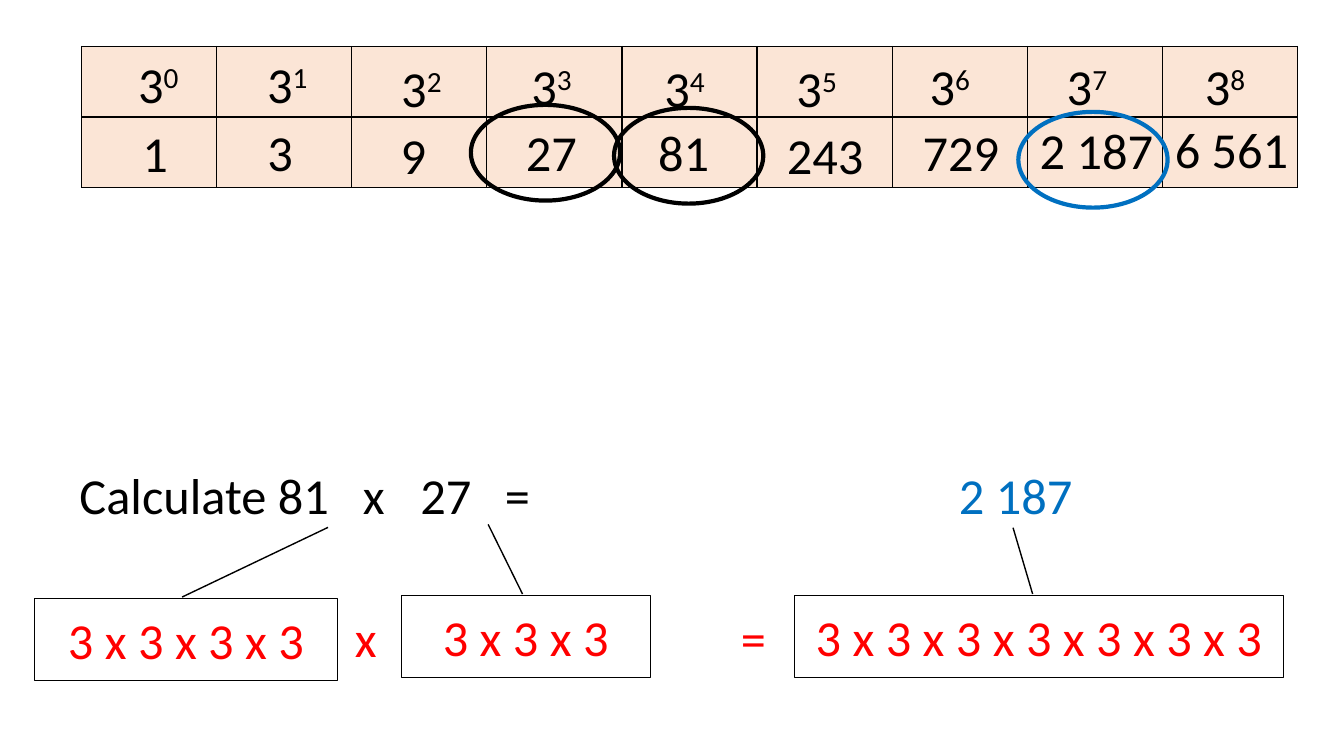
from lxml import etree
from pptx import Presentation
from pptx.dml.color import RGBColor
from pptx.enum.shapes import MSO_SHAPE
from pptx.enum.text import MSO_ANCHOR, MSO_AUTO_SIZE, PP_ALIGN
from pptx.oxml.ns import qn
from pptx.util import Inches, Pt

BLACK, RED, BLUE = "000000", "FF0000", "0070C0"
WHITE, PEACH = "FFFFFF", "FBE5D6"
COLUMN_WIDTH, ROW_HEIGHT = 1.34, 0.7
TEXT_HEIGHT = 0.71

# Value, offset of the power (left, top), box of the value (left, top, width),
# all measured from the corner of the table.
POWERS = [
    ("1", (0.39, 0.02), (0.36, 0.7, 0.74)),
    ("3", (1.67, 0.02), (1.6, 0.69, 0.74)),
    ("9", (3.0, 0.06), (2.92, 0.72, 0.74)),
    ("27", (4.29, 0.04), (4.29, 0.69, 0.74)),
    ("81", (5.61, 0.06), (5.6, 0.69, 0.74)),
    ("243", (6.92, 0.06), (6.86, 0.72, 1.03)),
    ("729", (8.24, 0.04), (8.23, 0.69, 0.98)),
    ("2 187", (9.6, 0.04), (9.38, 0.67, 1.37)),
    ("6 561", (10.97, 0.04), (10.68, 0.66, 1.45)),
]
# Offset of each ring from the corner of the table, and its colour.
RINGS = [(3.86, 0.58, BLACK), (5.28, 0.61, BLACK), (9.29, 0.65, BLUE)]


def rgb(hex_colour):
    return RGBColor.from_string(hex_colour)


def format_runs(paragraph, colour):
    for run in paragraph.runs:
        run.font.name = "Calibri"
        run.font.size = Pt(36)
        run.font.color.rgb = rgb(colour)


def add_text(slide, text, left, top, width, colour=BLACK, align=PP_ALIGN.CENTER):
    box = slide.shapes.add_textbox(
        Inches(left), Inches(top), Inches(width), Inches(TEXT_HEIGHT))
    frame = box.text_frame
    frame.word_wrap = True
    frame.auto_size = MSO_AUTO_SIZE.SHAPE_TO_FIT_TEXT
    paragraph = frame.paragraphs[0]
    paragraph.text = text
    paragraph.alignment = align
    format_runs(paragraph, colour)
    return paragraph


def add_outlined_shape(slide, kind, box, colour, weight):
    shape = slide.shapes.add_shape(kind, *map(Inches, box))
    shape.shadow.inherit = False
    shape.fill.background()
    shape.line.color.rgb = rgb(colour)
    shape.line.width = Pt(weight)
    return shape


def set_borders(cell):
    properties = cell._tc.get_or_add_tcPr()
    for position, side in enumerate(("lnL", "lnR", "lnT", "lnB")):
        line = etree.Element(qn(f"a:{side}"), w=str(Pt(1)))
        fill = etree.SubElement(line, qn("a:solidFill"))
        etree.SubElement(fill, qn("a:srgbClr"), val=BLACK)
        properties.insert(position, line)


def add_grid(slide, left, top):
    columns = len(POWERS)
    table = slide.shapes.add_table(
        2, columns, Inches(left), Inches(top),
        Inches(COLUMN_WIDTH * columns), Inches(ROW_HEIGHT * 2)).table
    for column in table.columns:
        column.width = Inches(COLUMN_WIDTH)
    for row in table.rows:
        row.height = Inches(ROW_HEIGHT)
    for cell in table.iter_cells():
        cell.fill.solid()
        cell.fill.fore_color.rgb = rgb(PEACH)
        set_borders(cell)


def add_power_table(slide, left, top):
    """Powers of three above their values, with the used values ringed."""
    add_grid(slide, left, top)
    for exponent, (value, power_offset, value_box) in enumerate(POWERS):
        x, y = power_offset
        paragraph = add_text(slide, "3", left + x, top + y, 0.74)
        superscript = paragraph.add_run()
        superscript.text = str(exponent)
        format_runs(paragraph, BLACK)
        superscript.font._element.set("baseline", "30000")
        x, y, width = value_box
        add_text(slide, value, left + x, top + y, width)
    for x, y, colour in RINGS:
        add_outlined_shape(slide, MSO_SHAPE.FLOWCHART_CONNECTOR,
                           (left + x, top + y, 1.48, 0.95), colour, 3)


def add_question(slide, left, top):
    paragraph = add_text(slide, "Calculate 81\tx\t27\t=", left, top, 11.83,
                         align=PP_ALIGN.LEFT)
    tabs = etree.SubElement(paragraph._p.get_or_add_pPr(), qn("a:tabLst"))
    for position in (2.81, 3.38, 4.22):
        etree.SubElement(tabs, qn("a:tab"), pos=str(Inches(position)), algn="l")
    add_text(slide, "2 187", left + 8.2, top, 2.37, BLUE)


def add_factor_callout(slide, text, box, tip):
    """Box whose leader ends at tip (y, x), in shares of the box's size."""
    callout = add_outlined_shape(slide, MSO_SHAPE.LINE_CALLOUT_1, box, BLACK, 1)
    for index, share in enumerate((-0.021, 0.487, *tip)):
        callout.adjustments[index] = share
    callout.fill.solid()
    callout.fill.fore_color.rgb = rgb(WHITE)
    frame = callout.text_frame
    frame.word_wrap = True
    frame.vertical_anchor = MSO_ANCHOR.MIDDLE
    paragraph = frame.paragraphs[0]
    paragraph.text = text
    paragraph.alignment = PP_ALIGN.CENTER
    format_runs(paragraph, RED)


def add_expansion(slide, left, top):
    """Both factors and their product written out as threes."""
    factors = [
        (4, 0, 0.03, 3.01, (-0.875, 0.968)),
        (3, 3.64, 0, 2.47, (-0.875, 0.349)),
        (7, 7.54, 0, 4.85, (-0.833, 0.447)),
    ]
    for count, x, y, width, tip in factors:
        add_factor_callout(slide, " x ".join(["3"] * count),
                           (left + x, top + y, width, 0.81), tip)
    for sign, x in (("x", 3.08), ("=", 6.91)):
        add_text(slide, sign, left + x, top + 0.06, 0.38, RED, PP_ALIGN.LEFT)


def main():
    presentation = Presentation()
    presentation.slide_width = Inches(13.33)
    presentation.slide_height = Inches(7.5)
    slide = presentation.slides.add_slide(presentation.slide_layouts[6])
    add_power_table(slide, 0.81, 0.46)
    add_question(slide, 0.69, 4.56)
    add_expansion(slide, 0.34, 5.91)
    presentation.save("out.pptx")


if __name__ == "__main__":
    main()
